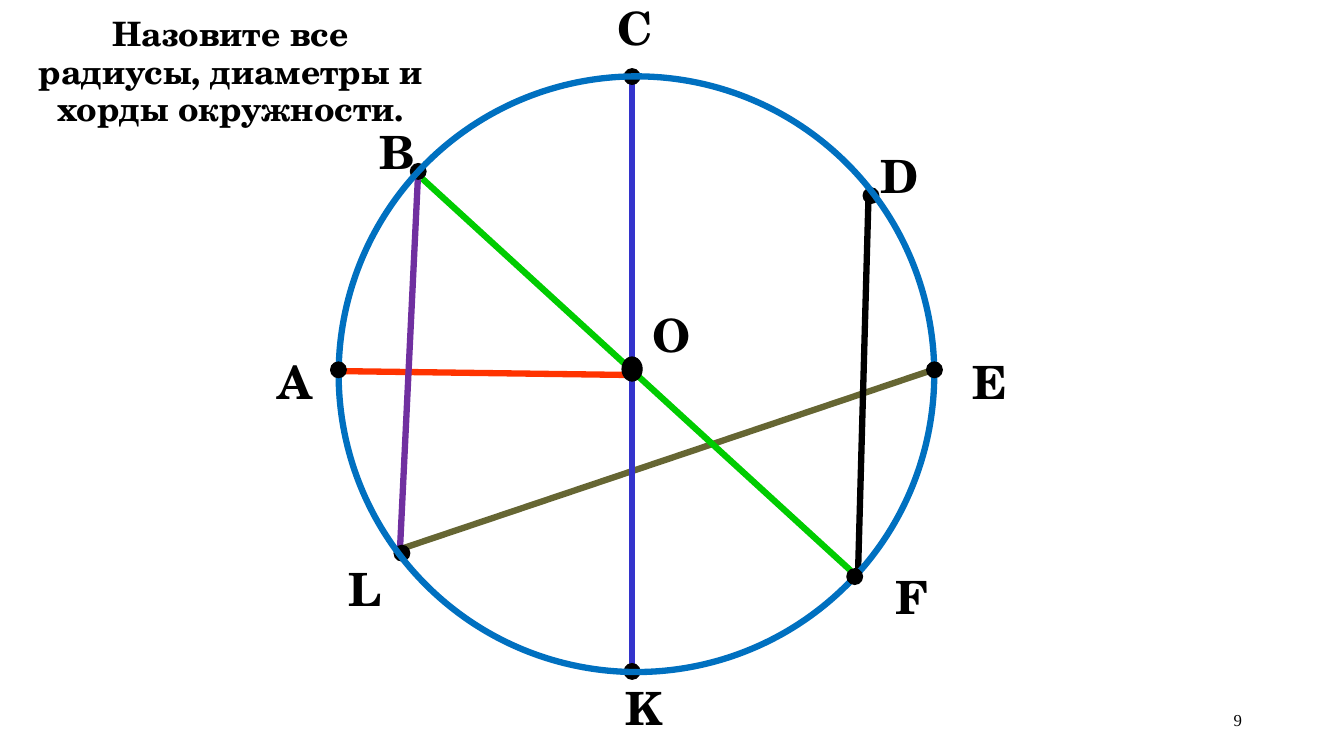
"""Builds a geometry slide about radii, diameters and chords of a circle."""
from dataclasses import dataclass

from lxml.etree import SubElement
from pptx import Presentation
from pptx.dml.color import RGBColor
from pptx.enum.shapes import MSO_CONNECTOR, MSO_SHAPE
from pptx.enum.text import MSO_ANCHOR as Anchor, MSO_AUTO_SIZE as AutoSize, PP_ALIGN as Align
from pptx.oxml.ns import qn
from pptx.util import Cm, Pt


@dataclass(frozen=True)
class Theme:
    """Colours, fonts and sizes of the slide."""
    black: str = "000000"
    blue: str = "0070C0"
    olive: str = "666633"
    indigo: str = "3333CC"
    green: str = "00CC00"
    red: str = "FF3300"
    purple: str = "7030A0"
    serif: str = "TeX Gyre Schola"
    number_font: str = "Times New Roman"
    title_size: float = 24
    label_size: float = 32.7
    number_size: float = 12
    thick: float = 4.5
    thin: float = 0.75


THEME = Theme()
DOT = 0.4
LABEL_HEIGHT = 1.55

SEGMENTS = [
    ((10.08, 13.84), (23.42, 9.35), THEME.olive),
    ((15.93, 1.73), (15.93, 16.92), THEME.indigo),
    ((10.64, 4.5), (21.44, 14.38), THEME.green),
    ((8.48, 9.35), (15.85, 9.45), THEME.red),
    ((10.54, 4.32), (10.08, 13.84), THEME.purple),
    ((21.62, 14.55), (21.89, 4.85), THEME.black),
]
DOTS_BEHIND = [(10.54, 4.32), (10.13, 13.94), (15.93, 1.93), (21.95, 4.93), (15.93, 16.92)]
DOTS_IN_FRONT = [(8.53, 9.32), (21.54, 14.53), (23.55, 9.32)]
CIRCLE_CENTRE = (16.04, 9.43)
CIRCLE_SIZE = 15.01
POINT_O = (15.93, 9.3)
LABELS = [
    ("А", 6.73, 8.92, 1.4),
    ("В", 9.32, 3.12, 1.4),
    ("С", 15.32, 0, 1.19),
    ("D", 21.95, 3.73, 0.99),
    ("E", 23.93, 8.92, 2.01),
    ("F", 22.33, 14.33, 1.19),
    ("K", 15.52, 17.12, 1.4),
    ("L", 8.53, 14.12, 0.79),
    ("O", 16.13, 7.72, 1.6),
]


def add_segment(slide, start, end, color):
    """Draw a thick straight segment between two points."""
    ends = [Cm(value) for value in (*start, *end)]
    segment = slide.shapes.add_connector(MSO_CONNECTOR.STRAIGHT, *ends)
    segment.line.color.rgb = RGBColor.from_string(color)
    segment.line.width = Pt(THEME.thick)
    SubElement(segment._element.spPr, qn("a:effectLst"))


def add_ellipse(slide, centre, width, height, color, line_width, filled=True):
    """Draw an ellipse around its centre."""
    left, top = centre[0] - width / 2, centre[1] - height / 2
    ellipse = slide.shapes.add_shape(MSO_SHAPE.OVAL, Cm(left), Cm(top), Cm(width), Cm(height))
    ellipse.shadow.inherit = False
    if filled:
        ellipse.fill.solid()
        ellipse.fill.fore_color.rgb = RGBColor.from_string(color)
    else:
        ellipse.fill.background()
    ellipse.line.color.rgb = RGBColor.from_string(color)
    ellipse.line.width = Pt(line_width)


def add_dots(slide, centres):
    """Mark points with small black dots."""
    for centre in centres:
        add_ellipse(slide, centre, DOT, DOT, THEME.black, THEME.thin)


def write_text(shape, text, size, font=THEME.serif, bold=True, align=Align.CENTER,
               spacing=0.93, anchor=Anchor.TOP):
    """Fill a shape with one formatted paragraph."""
    frame = shape.text_frame
    frame.text = text
    frame.word_wrap = True
    frame.auto_size = AutoSize.NONE
    frame.vertical_anchor = anchor
    paragraph = frame.paragraphs[0]
    paragraph.alignment = align
    paragraph.line_spacing = spacing
    paragraph.space_before = Pt(0)
    paragraph.font.name = font
    paragraph.font.size = Pt(size)
    paragraph.font.bold = bold
    paragraph.font.color.rgb = RGBColor.from_string(THEME.black)


def set_title(slide, text):
    """Place and format the title."""
    title = slide.shapes.title
    title.left, title.top, title.width, title.height = Cm(0.43), Cm(0.3), Cm(10.77), Cm(3.12)
    write_text(title, text, THEME.title_size)


def add_label(slide, letter, left, top, width):
    """Name a point with a bold letter."""
    box = slide.shapes.add_textbox(Cm(left), Cm(top), Cm(width), Cm(LABEL_HEIGHT))
    write_text(box, letter, THEME.label_size)


def add_page_number(slide, number):
    """Put the page number at the bottom right."""
    box = slide.shapes.add_textbox(Cm(23.93), Cm(17.65), Cm(7.62), Cm(1.02))
    write_text(box, number, THEME.number_size, THEME.number_font, False, Align.RIGHT,
               0.95, Anchor.MIDDLE)


def main():
    """Build and save the presentation."""
    presentation = Presentation()
    presentation.slide_width, presentation.slide_height = Cm(33.87), Cm(19.05)
    slide = presentation.slides.add_slide(presentation.slide_layouts[5])
    set_title(slide, "Назовите все радиусы, диаметры и хорды окружности.")
    for segment in SEGMENTS:
        add_segment(slide, *segment)
    add_dots(slide, DOTS_BEHIND)
    add_ellipse(slide, CIRCLE_CENTRE, CIRCLE_SIZE, CIRCLE_SIZE, THEME.blue, THEME.thick, False)
    add_ellipse(slide, POINT_O, 0.51, 0.61, THEME.black, THEME.thin)
    add_dots(slide, DOTS_IN_FRONT)
    for label in LABELS:
        add_label(slide, *label)
    add_page_number(slide, "9")
    presentation.save("out.pptx")


if __name__ == "__main__":
    main()
